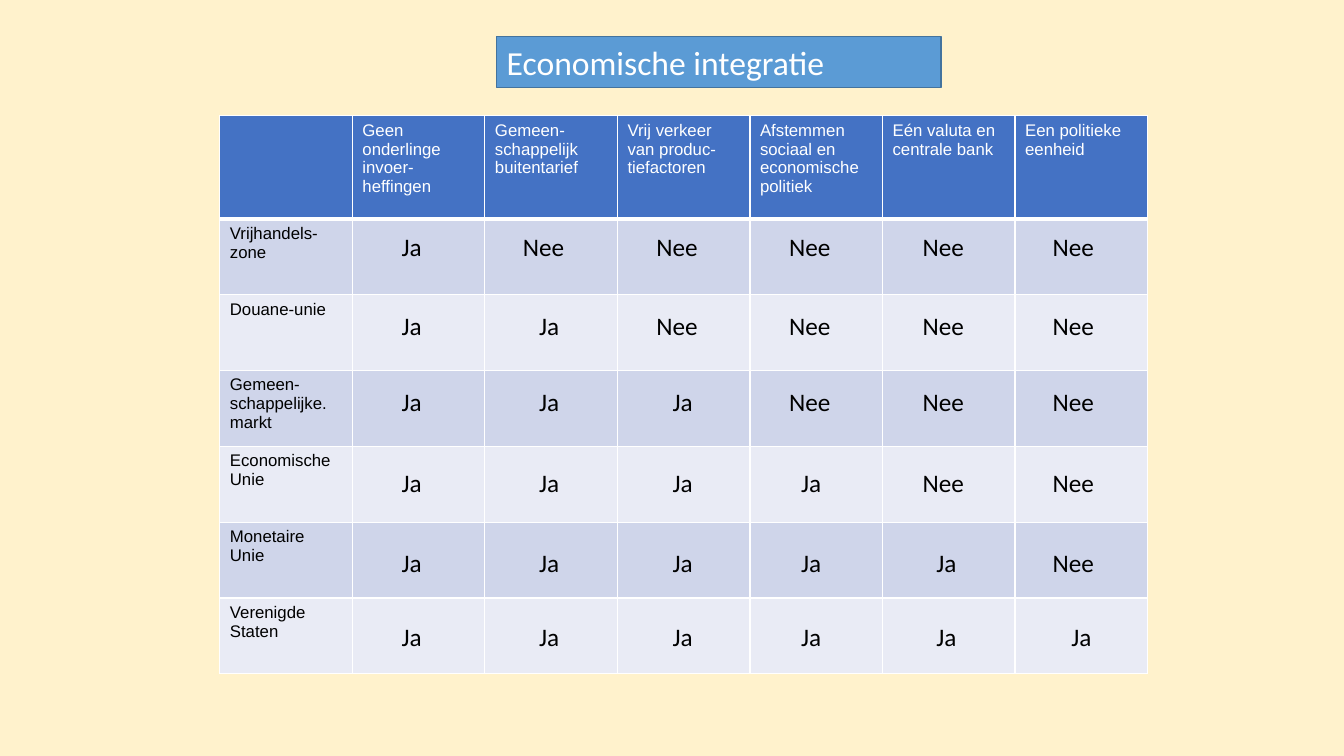
from lxml import etree
from pptx import Presentation
from pptx.dml.color import RGBColor
from pptx.enum.shapes import MSO_SHAPE
from pptx.enum.text import MSO_ANCHOR, PP_ALIGN
from pptx.oxml.ns import qn
from pptx.util import Cm, Pt

RECTANGLE = MSO_SHAPE.RECTANGLE
MIDDLE = MSO_ANCHOR.MIDDLE
LEFT = PP_ALIGN.LEFT

CRITERIA = [
    "Geen onderlinge invoer-heffingen",
    "Gemeen-schappelijk buitentarief",
    "Vrij verkeer van produc-tiefactoren",
    "Afstemmen sociaal en economische politiek",
    "Eén valuta en centrale bank",
    "Een politieke eenheid",
]
STAGES = [
    ["Vrijhandels-zone"],
    ["Douane-unie"],
    ["Gemeen-", "schappelijke.", "markt"],
    ["Economische Unie"],
    ["Monetaire Unie"],
    ["Verenigde Staten"],
]
COLUMN_WIDTH = 3.34
HEADER_HEIGHT = 2.6
STAGE_HEIGHT = 1.91
BAND_COLORS = ["CFD5EA", "E9EBF5"]

YES_LEFTS = [4.33, 7.8, 11.16, 14.4, 17.81, 21.21]
NO_LEFTS = [4.0, 7.39, 10.75, 14.1, 17.46, 20.74]
ANSWER_TOPS = [2.78, 4.77, 6.69, 8.72, 10.74, 12.6]


def color(value):
    """Turn a hex string into a colour."""
    return RGBColor.from_string(value)


def write(text_frame, lines, font_name, size, text_color):
    """Fill a text frame with one paragraph per line."""
    for index, line in enumerate(lines):
        paragraph = text_frame.paragraphs[0] if index == 0 else text_frame.add_paragraph()
        paragraph.alignment = LEFT
        run = paragraph.add_run()
        run.text = line
        run.font.name = font_name
        run.font.size = Pt(size)
        run.font.bold = False
        run.font.color.rgb = color(text_color)


def style_cell(cell, fill_color, top_width, bottom_width):
    """Give a cell white borders and a solid fill."""
    properties = cell._tc.get_or_add_tcPr()
    widths = {"a:lnL": 1, "a:lnR": 1, "a:lnT": top_width, "a:lnB": bottom_width}
    for tag, width in widths.items():
        line = etree.SubElement(properties, qn(tag), w=str(Pt(width)))
        fill = etree.SubElement(line, qn("a:solidFill"))
        etree.SubElement(fill, qn("a:srgbClr"), val="FFFFFF")
    cell.fill.solid()
    cell.fill.fore_color.rgb = color(fill_color)


def add_title(slide, left, top, width, height):
    """Place the title bar."""
    shape = slide.shapes.add_shape(RECTANGLE, Cm(left), Cm(top), Cm(width), Cm(height))
    shape.shadow.inherit = False
    shape.fill.solid()
    shape.fill.fore_color.rgb = color("5B9BD5")
    shape.line.color.rgb = color("43739E")
    shape.line.width = Pt(1)
    shape.text_frame.word_wrap = True
    shape.text_frame.vertical_anchor = MIDDLE
    write(shape.text_frame, ["Economische integratie"], "Calibri", 24, "FFFFFF")


def add_integration_table(slide, left, top):
    """Place the table of integration stages against criteria."""
    row_count, column_count = len(STAGES) + 1, len(CRITERIA) + 1
    table = slide.shapes.add_table(
        row_count, column_count, Cm(left), Cm(top),
        Cm(COLUMN_WIDTH * column_count), Cm(HEADER_HEIGHT + STAGE_HEIGHT * len(STAGES)),
    ).table
    for column in table.columns:
        column.width = Cm(COLUMN_WIDTH)
    for index, row in enumerate(table.rows):
        row.height = Cm(STAGE_HEIGHT if index else HEADER_HEIGHT)
        fill_color = BAND_COLORS[(index - 1) % 2] if index else "4472C4"
        for cell in row.cells:
            style_cell(cell, fill_color, 3 if index == 1 else 1, 1 if index else 3)
    for index, criterion in enumerate(CRITERIA, 1):
        write(table.cell(0, index).text_frame, [criterion], "Arial", 12, "FFFFFF")
    for index, stage in enumerate(STAGES, 1):
        write(table.cell(index, 0).text_frame, stage, "Arial", 12, "000000")


def add_answers(slide, left, top):
    """Place the answers over the table; each stage meets one more criterion."""
    for stage, answer_top in enumerate(ANSWER_TOPS):
        for criterion in range(len(CRITERIA)):
            if criterion <= stage:
                answer, answer_left, width = "Ja", YES_LEFTS[criterion], 1.4
            else:
                answer, answer_left, width = "Nee", NO_LEFTS[criterion], 1.8
            box = slide.shapes.add_textbox(
                Cm(left + answer_left), Cm(top + answer_top), Cm(width), Cm(1.02))
            box.text_frame.word_wrap = True
            write(box.text_frame, [answer], "Calibri", 18, "000000")


def main():
    """Build the slide and save it."""
    presentation = Presentation()
    presentation.slide_width = Cm(33.87)
    presentation.slide_height = Cm(19.05)
    slide = presentation.slides.add_slide(presentation.slide_layouts[6])
    slide.background.fill.solid()
    slide.background.fill.fore_color.rgb = color("FFF2CC")
    table_left, table_top = 5.54, 2.92
    add_integration_table(slide, table_left, table_top)
    add_title(slide, 12.52, 0.92, 11.2, 1.28)
    add_answers(slide, table_left, table_top)
    presentation.save("out.pptx")


if __name__ == "__main__":
    main()
